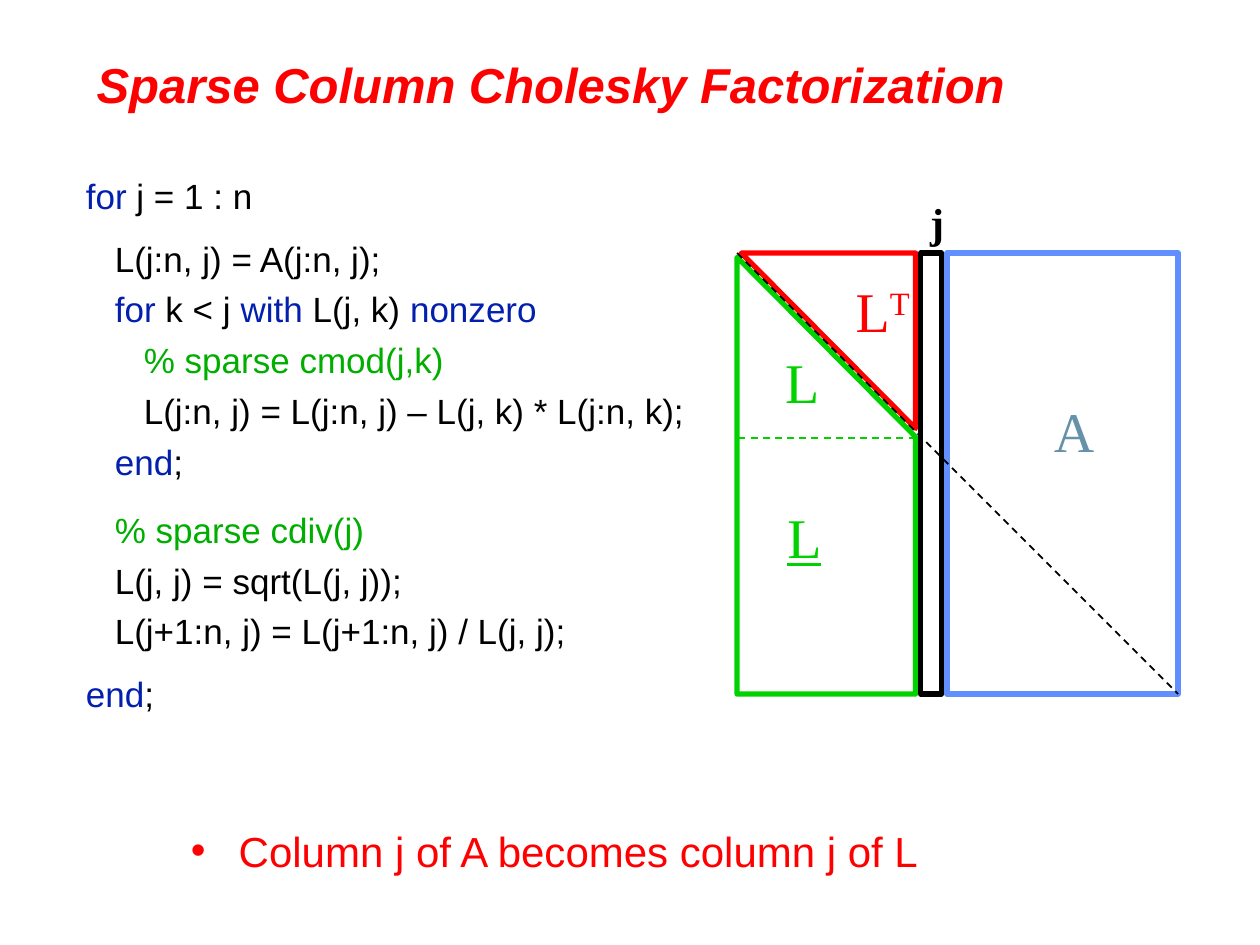
from lxml.etree import SubElement
from pptx import Presentation
from pptx.dml.color import RGBColor
from pptx.enum.dml import MSO_LINE_DASH_STYLE as Dash
from pptx.enum.shapes import MSO_CONNECTOR as Connector, MSO_SHAPE as Shape
from pptx.enum.text import MSO_ANCHOR as Anchor, MSO_AUTO_SIZE as AutoSize, PP_ALIGN as Align
from pptx.oxml.ns import qn
from pptx.util import Inches, Pt

RED = RGBColor(0xFF, 0x00, 0x00)
BLACK = RGBColor(0x00, 0x00, 0x00)
KEYWORD = RGBColor(0x02, 0x1F, 0xAE)
COMMENT = RGBColor(0x00, 0xAE, 0x00)
GREEN = RGBColor(0x00, 0xD2, 0x00)
BLUE = RGBColor(0x61, 0x8F, 0xFD)
STEEL = RGBColor(0x65, 0x91, 0xA9)

presentation = Presentation()
presentation.slide_width, presentation.slide_height = Inches(10), Inches(7.5)
slide = presentation.slides.add_slide(presentation.slide_layouts[5])
shapes = slide.shapes

# Grid of 120 columns and 90 rows; its cells are square
CELL = presentation.slide_width / 120


def grid(*cells):
    return [round(cell * CELL) for cell in cells]


def format_run(run, size, color, font="Arial"):
    run.font.size, run.font.name = Pt(size), font
    run.font.color.rgb = color


# Title
title = shapes.title
title.left, title.top, title.width, title.height = grid(8, 4, 98.3, 8)
title.text_frame.text = "Sparse Column Cholesky Factorization"
title.text_frame.auto_size = AutoSize.NONE
title.text_frame.vertical_anchor = Anchor.MIDDLE
paragraph = title.text_frame.paragraphs[0]
paragraph.alignment = Align.LEFT
format_run(paragraph.runs[0], 28, RED)
paragraph.font.bold = paragraph.font.italic = True

# Algorithm: indent level, space before in points, coloured pieces
code_lines = [
    (0, 2, [("for", KEYWORD), (" j = 1 : n", BLACK)]),
    (1, 12, [("L(j:n, j) = A(j:n, j);", BLACK)]),
    (1, 5, [("for", KEYWORD), (" k < j ", BLACK), ("with", KEYWORD),
            (" L(j, k) ", BLACK), ("nonzero", KEYWORD)]),
    (2, 5, [("% sparse cmod(j,k)", COMMENT)]),
    (2, 5, [("L(j:n, j) = L(j:n, j) – L(j, k) * L(j:n, k);", BLACK)]),
    (1, 5, [("end", KEYWORD), (";", BLACK)]),
    (1, 15, [("% sparse cdiv(j)", COMMENT)]),
    (1, 5, [("L(j, j) = sqrt(L(j, j));", BLACK)]),
    (1, 5, [("L(j+1:n, j) = L(j+1:n, j) / L(j, j);", BLACK)]),
    (0, 12, [("end", KEYWORD), (";", BLACK)]),
]
code_frame = shapes.add_textbox(*grid(7, 16, 60, 62)).text_frame
code_frame.word_wrap = True
for number, (level, space, pieces) in enumerate(code_lines):
    paragraph = code_frame.add_paragraph() if number else code_frame.paragraphs[0]
    paragraph.space_before = Pt(space)
    paragraph_format = paragraph._p.get_or_add_pPr()
    paragraph_format.set("marL", str(level * Inches(0.23)))
    for text, color in pieces:
        run = paragraph.add_run()
        run.text = text
        format_run(run, 20, color)

# Bulleted conclusion
conclusion = shapes.add_textbox(*grid(17, 78, 89, 9)).text_frame
conclusion.word_wrap = True
conclusion.text = "Column j of A becomes column j of L"
paragraph = conclusion.paragraphs[0]
paragraph.space_before = Pt(5)
format_run(paragraph.runs[0], 24, RED)
paragraph_format = paragraph._p.get_or_add_pPr()
paragraph_format.set("marL", str(Inches(0.38)))
paragraph_format.set("indent", str(-Inches(0.38)))
bullet_color = SubElement(paragraph_format, qn("a:buClr"))
SubElement(bullet_color, qn("a:srgbClr"), val=str(RED))
SubElement(paragraph_format, qn("a:buFont"), typeface="Arial")
SubElement(paragraph_format, qn("a:buChar"), char="•")

# Matrix: a square whose column j follows the finished columns of L
LEFT, TOP, SIDE = 70.2, 24.1, 42
RIGHT, BOTTOM = LEFT + SIDE, TOP + SIDE
COLUMN_J = LEFT + 17.5
EDGE = COLUMN_J - 0.5

rest_of_a = shapes.add_shape(Shape.RECTANGLE, *grid(COLUMN_J + 2.5, TOP, SIDE - 20, SIDE))
outlines = [(rest_of_a, BLUE)]
triangles = [
    ([(LEFT, TOP + 0.4), (LEFT, BOTTOM), (EDGE, BOTTOM), (EDGE, TOP + 17.5)], GREEN),
    ([(LEFT + 0.4, TOP), (EDGE, TOP), (EDGE, TOP + 16.7)], RED),
]
for points, color in triangles:
    start, *others = [grid(*point) for point in points]
    builder = shapes.build_freeform(*start)
    builder.add_line_segments(others, close=True)
    outlines.append((builder.convert_to_shape(), color))
column_j = shapes.add_shape(Shape.RECTANGLE, *grid(COLUMN_J, TOP, 2, SIDE))
outlines.append((column_j, BLACK))
for shape, color in outlines:
    shape.shadow.inherit = False
    shape.fill.background()
    shape.line.color.rgb = color
    shape.line.width = Pt(3)

# Dashed diagonal and the divider between the two parts of L
DIVIDER = TOP + 17.6
for ends, color in [((LEFT, TOP, RIGHT, BOTTOM), BLACK),
                    ((EDGE, DIVIDER, LEFT, DIVIDER), GREEN)]:
    line = shapes.add_connector(Connector.STRAIGHT, *grid(*ends))
    line.line.color.rgb = color
    line.line.width = Pt(1)
    line.line.dash_style = Dash.DASH
    SubElement(line._element.spPr, qn("a:effectLst"))

# Matrix labels
labels = [
    ("L", 73.8, 47.3, 5.6, 32, GREEN),
    ("L", 73.6, 32.5, 5.6, 32, GREEN),
    ("L", 80.3, 25.7, 7.8, 32, RED),
    ("A", 99.2, 37.2, 6.2, 32, STEEL),
    ("j", 87.4, 18.1, 3.7, 24, BLACK),
]
label_paragraphs = []
for text, left, top, width, size, color in labels:
    label = shapes.add_textbox(*grid(left, top, width, size * 0.24)).text_frame
    label.word_wrap = False
    label.auto_size = AutoSize.SHAPE_TO_FIT_TEXT
    label.text = text
    format_run(label.paragraphs[0].runs[0], size, color, "Times New Roman")
    label_paragraphs.append(label.paragraphs[0])
lower_l, upper_l, l_transposed, matrix_a, index_j = label_paragraphs
lower_l.runs[0].font.underline = True
index_j.runs[0].font.bold = True
superscript = l_transposed.add_run()
superscript.text = "T"
format_run(superscript, 32, RED, "Times New Roman")
superscript.font._element.set("baseline", "30000")

presentation.save("out.pptx")
